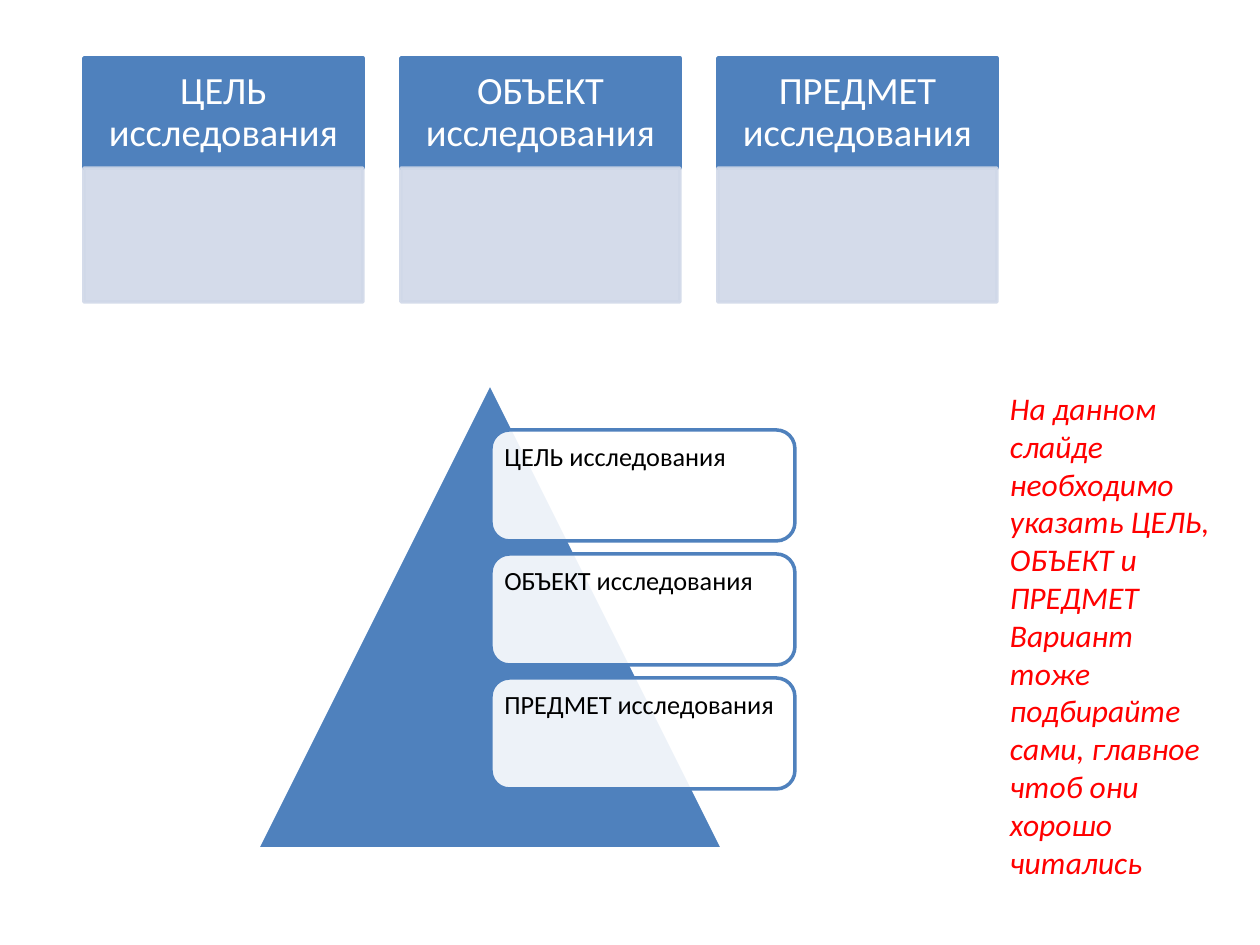
from lxml import etree
from pptx import Presentation
from pptx import util as u
from pptx.dml.color import RGBColor
from pptx.enum import shapes, text
from pptx.oxml.ns import qn

TOPICS = ["ЦЕЛЬ исследования", "ОБЪЕКТ исследования", "ПРЕДМЕТ исследования"]
NOTE = [
    "На данном слайде необходимо указать ЦЕЛЬ, ОБЪЕКТ и ПРЕДМЕТ",
    "Вариант тоже подбирайте сами, главное чтоб они хорошо читались",
]
COLORS = {"blue": "4F81BD", "pale": "D0D8E8", "white": "FFFFFF", "black": "000000", "red": "FF0000"}

PX = 914400 / 126
CARD = {"left": 84, "top": 58, "width": 279, "head": 110, "body": 134, "pitch": 317}
TRIANGLE = (257, 383, 466, 466)
LABEL = {"left": 491, "top": 430, "width": 304, "height": 111, "pitch": 124}
NOTE_BOX = (997, 383, 228, 547)

HEAD_TEXT = {"size": 22, "color": "white", "align": text.PP_ALIGN.CENTER,
             "anchor": text.MSO_ANCHOR.MIDDLE, "insets": (21, 12), "after": 7.7, "spacing": 0.9}
LABEL_TEXT = {"size": 15, "color": "black", "align": text.PP_ALIGN.LEFT,
              "anchor": text.MSO_ANCHOR.TOP, "insets": (8, 8), "after": 5.25, "spacing": 0.9}
NOTE_TEXT = {"size": 18, "color": "red", "align": text.PP_ALIGN.LEFT, "italic": True,
             "anchor": text.MSO_ANCHOR.TOP, "insets": (13, 6), "after": 0, "spacing": 1.0}


def px(value):
    return u.Emu(round(value * PX))


def rgb(name):
    return RGBColor.from_string(COLORS[name])


def set_alpha(fill_parent, percent):
    color = fill_parent.find(qn("a:solidFill"))[0]
    etree.SubElement(color, qn("a:alpha")).set("val", str(percent * 1000))


def add_block(slide, kind, box, fill, line, fill_alpha=None, line_alpha=None):
    shape = slide.shapes.add_shape(kind, *map(px, box))
    shape.shadow.inherit = False
    shape.fill.solid()
    shape.fill.fore_color.rgb = rgb(fill)
    shape.line.color.rgb = rgb(line)
    shape.line.width = u.Pt(2)
    properties = shape._element.spPr
    if fill_alpha:
        set_alpha(properties, fill_alpha)
    if line_alpha:
        set_alpha(properties.find(qn("a:ln")), line_alpha)
    return shape


def write(shape, lines, style):
    frame = shape.text_frame
    across, down = map(px, style["insets"])
    frame_format = {"word_wrap": True, "vertical_anchor": style["anchor"],
                    "margin_left": across, "margin_right": across,
                    "margin_top": down, "margin_bottom": down}
    for name, value in frame_format.items():
        setattr(frame, name, value)
    paragraph_format = {"alignment": style["align"], "line_spacing": style["spacing"],
                        "space_after": u.Pt(style["after"])}
    font_format = {"name": "Calibri", "size": u.Pt(style["size"]), "italic": style.get("italic")}
    for index, line in enumerate(lines):
        paragraph = frame.add_paragraph() if index else frame.paragraphs[0]
        for name, value in paragraph_format.items():
            setattr(paragraph, name, value)
        run = paragraph.add_run()
        run.text = line
        for name, value in font_format.items():
            setattr(run.font, name, value)
        run.font.color.rgb = rgb(style["color"])


def main():
    presentation = Presentation()
    presentation.slide_width, presentation.slide_height = u.Inches(10), u.Inches(7.5)
    slide = presentation.slides.add_slide(presentation.slide_layouts[6])
    kinds = shapes.MSO_SHAPE

    for index, topic in enumerate(TOPICS):
        left = CARD["left"] + index * CARD["pitch"]
        head = (left, CARD["top"], CARD["width"], CARD["head"])
        body = (left, CARD["top"] + CARD["head"], CARD["width"], CARD["body"])
        write(add_block(slide, kinds.RECTANGLE, head, "blue", "blue"), [topic], HEAD_TEXT)
        add_block(slide, kinds.RECTANGLE, body, "pale", "pale", 90, 90)

    add_block(slide, kinds.ISOSCELES_TRIANGLE, TRIANGLE, "blue", "white")
    for index, topic in enumerate(TOPICS):
        box = (LABEL["left"], LABEL["top"] + index * LABEL["pitch"], LABEL["width"], LABEL["height"])
        label = add_block(slide, kinds.ROUNDED_RECTANGLE, box, "white", "blue", 90)
        write(label, [topic], LABEL_TEXT)

    note = slide.shapes.add_textbox(*map(px, NOTE_BOX))
    write(note, NOTE, NOTE_TEXT)
    note.text_frame.auto_size = text.MSO_AUTO_SIZE.SHAPE_TO_FIT_TEXT

    presentation.save("out.pptx")


if __name__ == "__main__":
    main()
